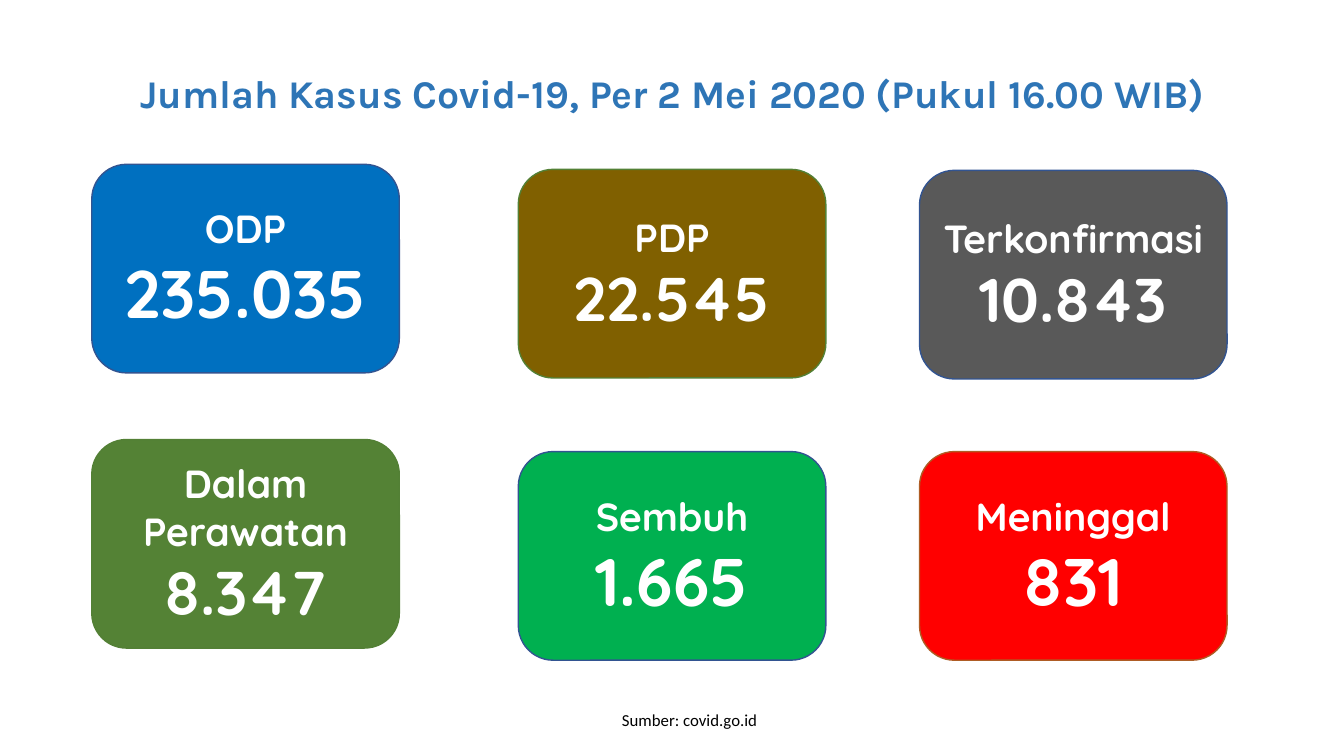
from dataclasses import dataclass

from pptx import Presentation
from pptx.dml.color import RGBColor
from pptx.enum.shapes import MSO_SHAPE
from pptx.enum.text import MSO_ANCHOR, MSO_AUTO_SIZE, PP_ALIGN
from pptx.util import Inches, Pt

ROUND = MSO_SHAPE.ROUNDED_RECTANGLE
TOP = MSO_ANCHOR.TOP
MIDDLE = MSO_ANCHOR.MIDDLE
NO_FIT = MSO_AUTO_SIZE.NONE
CENTER = PP_ALIGN.CENTER


@dataclass(frozen=True)
class Theme:
    title: str = "2E75B6"
    light: str = "FFFFFF"
    dark: str = "000000"
    navy: str = "325491"
    moss: str = "538035"
    rust: str = "AF5C24"
    head: int = 28
    count: int = 44
    large: int = 48
    note: int = 12
    edge: int = 1


THEME = Theme()
WIDE, HIGH = 13.33, 7.5
TITLE = (3.68, 8.53, 92.65, 7.6)
DECK = (6.83, 21.73, 84.47, 65.6)
NOTE = (29.71, 93.2, 43.21, 4)
COLS = (0, 37.57, 72.91)
CARD = (27.09, 42.07)

CARDS = (
    (0, 0, "ODP", "235.035", THEME.large, "0070C0", THEME.navy),
    (1, 1.02, "PDP", "22.545", THEME.count, "806000", THEME.moss),
    (2, 1.22, "Terkonfirmasi", "10.843", THEME.count, "595959", THEME.navy),
    (0, 55.49, "Dalam Perawatan", "8.347", THEME.count, "548235", THEME.moss),
    (1, 57.93, "Sembuh", "1.665", THEME.large, "00B050", THEME.navy),
    (2, 57.93, "Meninggal", "831", THEME.large, "FF0000", THEME.rust),
)


def within(box, part):
    left, top, width, height = box
    x, y, w, h = (share / 100 for share in part)
    return (round(left + x * width), round(top + y * height),
            round(w * width), round(h * height))


def place(shape, box):
    for name, value in zip(("left", "top", "width", "height"), box):
        setattr(shape, name, value)


def write(shape, lines, face, color, bold, anchor):
    frame = shape.text_frame
    frame.text = "\n".join(text for text, size in lines)
    form = {"word_wrap": True, "auto_size": NO_FIT, "vertical_anchor": anchor}
    for name, value in form.items():
        setattr(frame, name, value)
    for para, (text, size) in zip(frame.paragraphs, lines):
        form = {"alignment": CENTER, "line_spacing": 1.0, "space_before": Pt(0)}
        for name, value in form.items():
            setattr(para, name, value)
        font = para.runs[0].font
        for name, value in {"name": face, "size": Pt(size), "bold": bold}.items():
            setattr(font, name, value)
        font.color.rgb = RGBColor.from_string(color)


def add_title(slide, box):
    title = slide.shapes.title
    place(title, box)
    text = "Jumlah Kasus Covid-19, Per 2 Mei 2020 (Pukul 16.00 WIB)"
    write(title, [(text, THEME.head)], "Karla", THEME.title, True, TOP)


def add_deck(slide, box):
    for col, top, label, count, size, fill, edge in CARDS:
        spot = within(box, (COLS[col], top, *CARD))
        card = slide.shapes.add_shape(ROUND, *spot)
        card.shadow.inherit = False
        card.fill.solid()
        card.fill.fore_color.rgb = RGBColor.from_string(fill)
        card.line.color.rgb = RGBColor.from_string(edge)
        card.line.width = Pt(THEME.edge)
        lines = [(label, THEME.head), (count, size)]
        write(card, lines, "Quicksand", THEME.light, True, MIDDLE)


def add_note(slide, box):
    note = slide.shapes.add_textbox(*box)
    lines = [("Sumber: covid.go.id", THEME.note)]
    write(note, lines, "Calibri", THEME.dark, False, TOP)


def main():
    deck = Presentation()
    deck.slide_width = Inches(WIDE)
    deck.slide_height = Inches(HIGH)
    slide = deck.slides.add_slide(deck.slide_layouts[5])
    page = (0, 0, deck.slide_width, deck.slide_height)
    for draw, part in ((add_title, TITLE), (add_deck, DECK), (add_note, NOTE)):
        draw(slide, within(page, part))
    deck.save("out.pptx")


if __name__ == "__main__":
    main()
